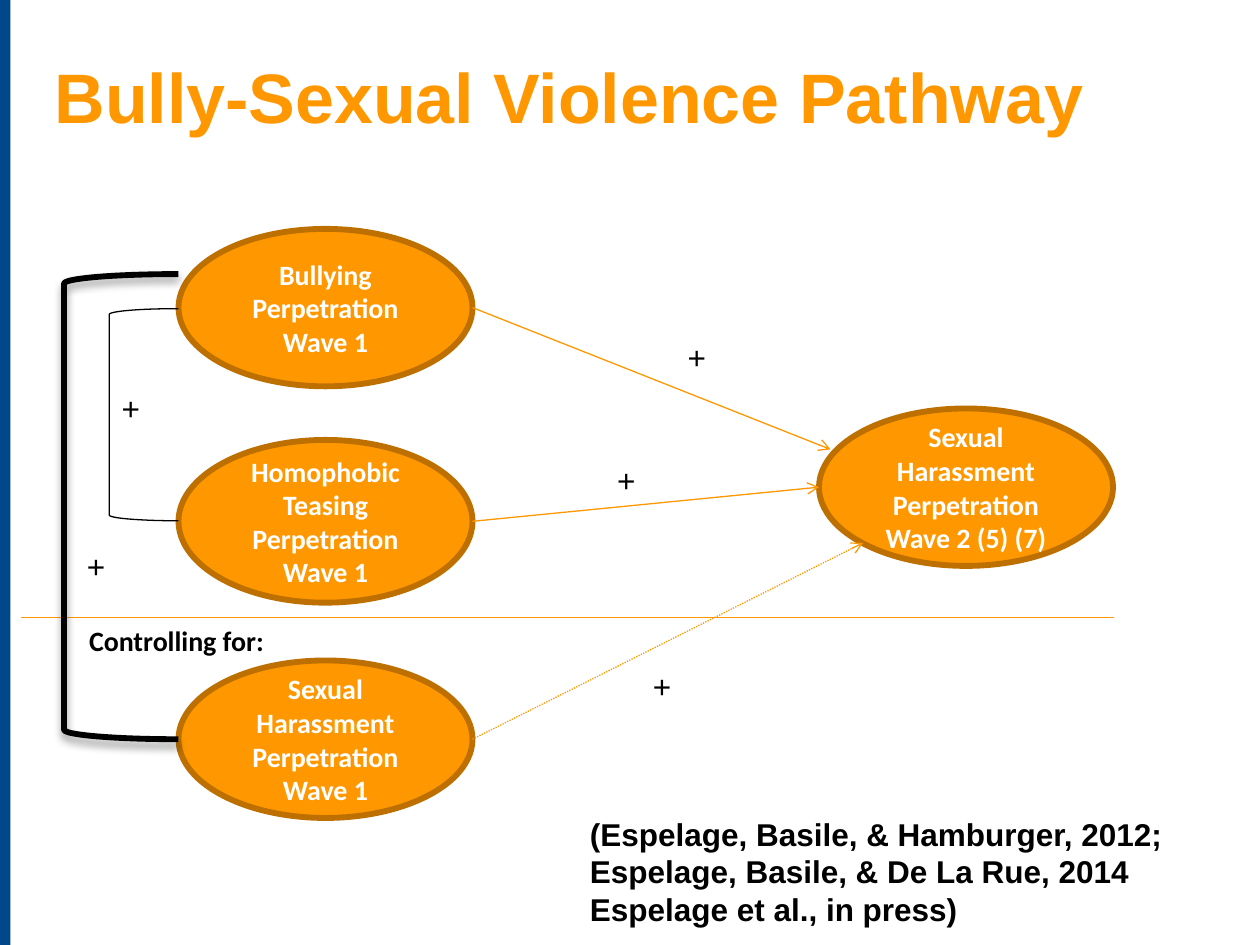
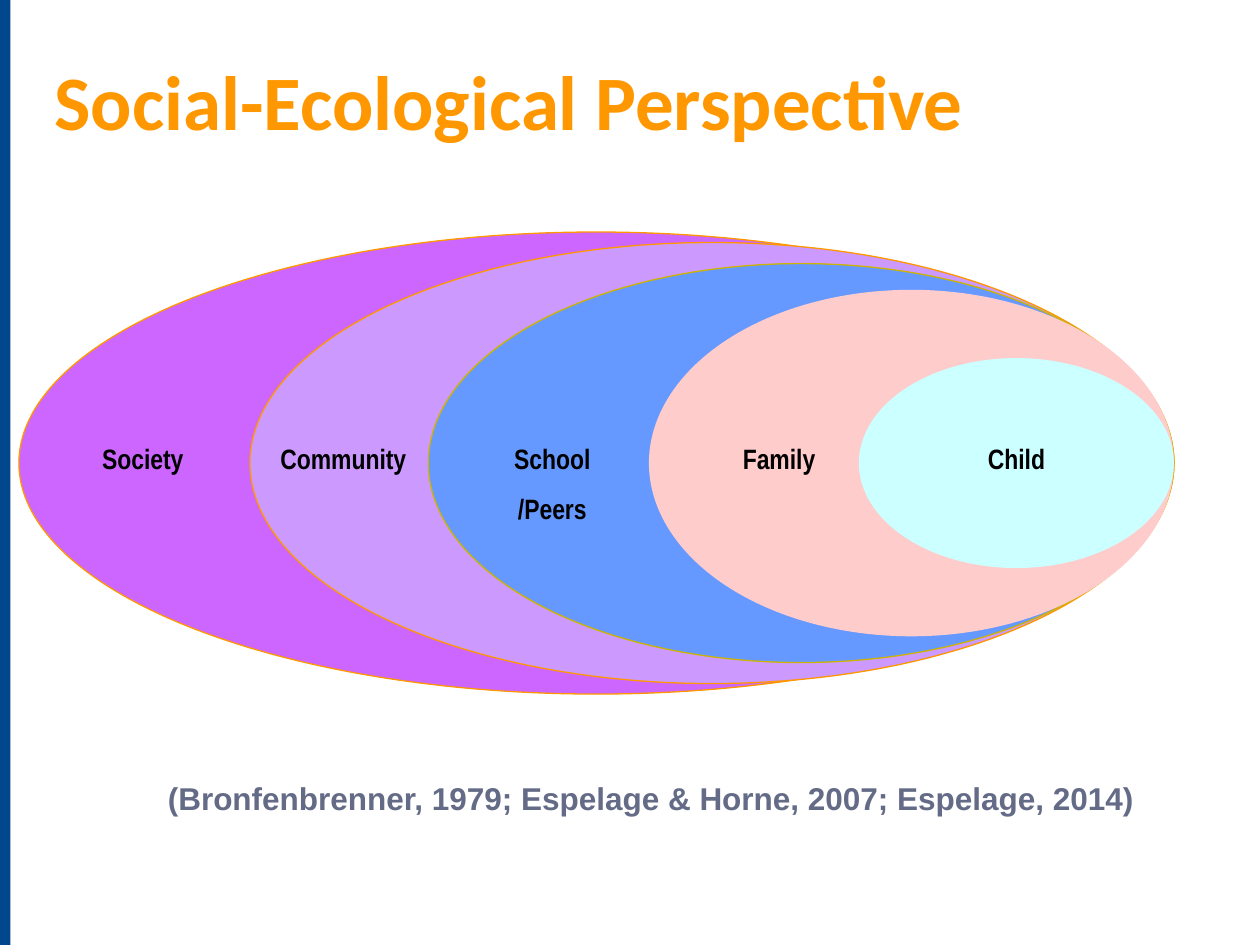
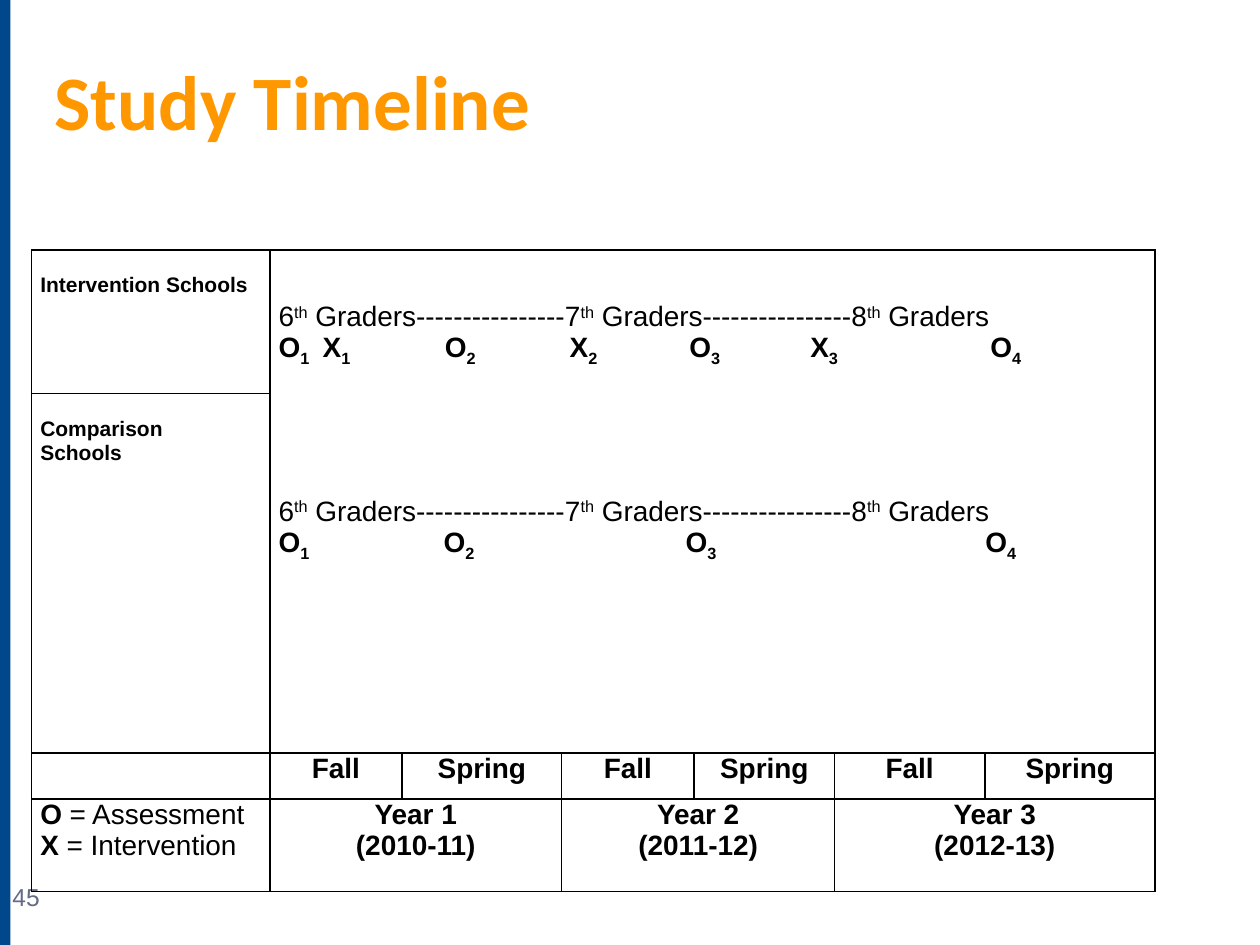
import itertools
from dataclasses import dataclass, field

import pptx
import pptx.dml.color
import pptx.enum.dml
import pptx.enum.shapes
import pptx.enum.text
import pptx.oxml
import pptx.oxml.ns
import pptx.util

COLORS = {
    "band": "00478B", "accent": "FF9800", "accent_edge": "BD7000", "text": "000000",
    "white": "FFFFFF", "muted": "646B86", "society": "CC66FF", "community": "CC99FF",
    "school": "6699FF", "school_edge": "CCB400", "family": "FFCCCC", "child": "CCFFFF",
}
FONTS = {
    "title": {"name": "Calibri", "size": 44, "bold": True, "color": "accent"},
    "node": {"name": "Calibri", "size": 16, "bold": True, "color": "white"},
    "note": {"name": "Calibri", "size": 16, "bold": True, "color": "text"},
    "sign": {"name": "Arial", "size": 18, "bold": False, "color": "text"},
    "citation": {"name": "Arial", "size": 18, "bold": True, "color": "text"},
    "layer": {"name": "Arial Narrow", "size": 16, "bold": True, "color": "text"},
    "number": {"name": "Arial", "size": 14, "bold": False, "color": "muted"},
    "cell": {"name": "Arial", "size": 16, "bold": True, "color": "text"},
}
COLUMNS, ROWS = 120, 90
SHAPES = pptx.enum.shapes.MSO_SHAPE
CENTER = pptx.enum.text.PP_ALIGN.CENTER
LEFT = pptx.enum.text.PP_ALIGN.LEFT
TOP = pptx.enum.text.MSO_ANCHOR.TOP
MIDDLE = pptx.enum.text.MSO_ANCHOR.MIDDLE
DOTTED = pptx.enum.dml.MSO_LINE.ROUND_DOT
Pt, Inches = pptx.util.Pt, pptx.util.Inches


@dataclass
class Paragraph:
    """Runs are (text, font changes) pairs; tabs are in inches."""
    runs: list
    tabs: list = field(default_factory=list)
    layout: dict = field(default_factory=dict)


def rgb(name):
    return pptx.dml.color.RGBColor.from_string(COLORS[name])


def set_all(target, values):
    for name, value in values.items():
        setattr(target, name, value)


def xml(markup):
    """Parse one DrawingML element, given without its namespace declaration."""
    head, rest = markup.split(" ", 1)
    return pptx.oxml.parse_xml(f"{head} {pptx.oxml.ns.nsdecls('a')} {rest}")


def write(frame, paragraphs, font, **layout):
    for index, content in enumerate(paragraphs):
        if isinstance(content, str):
            content = Paragraph([(content, {})])
        paragraph = frame.paragraphs[0] if index == 0 else frame.add_paragraph()
        values = {**layout, **content.layout}
        if index == 0:
            values.pop("space_before", None)
        set_all(paragraph, values)
        if content.tabs:
            stops = "".join(f'<a:tab pos="{Inches(tab)}" algn="l"/>' for tab in content.tabs)
            paragraph._p.get_or_add_pPr().append(xml(f"<a:tabLst >{stops}</a:tabLst>"))
        for text, changes in content.runs:
            run = paragraph.add_run()
            run.text = text
            style = {**FONTS[font], **changes}
            run.font.color.rgb = rgb(style.pop("color"))
            baseline = style.pop("baseline", None)
            set_all(run.font, {**style, "size": Pt(style["size"])})
            if baseline:
                run._r.get_or_add_rPr().set("baseline", str(baseline * 1000))


class Deck:
    """Holds the shared style and the current slide; lengths are grid columns and rows."""

    def __init__(self):
        self.file = pptx.Presentation()
        set_all(self.file, {"slide_width": Inches(10), "slide_height": Inches(7.5)})
        self.layout = self.file.slide_layouts[5]
        title = self.layout.placeholders[0]
        set_all(title, dict(zip(("left", "top", "width", "height"), self.box(4, 4, 103, 9))))
        set_all(title.text_frame, {
            "vertical_anchor": TOP, "margin_top": Inches(0.09), "word_wrap": True,
            "auto_size": pptx.enum.text.MSO_AUTO_SIZE.NONE})
        self.slide = None

    def across(self, columns):
        return round(self.file.slide_width * columns / COLUMNS)

    def down(self, rows):
        return round(self.file.slide_height * rows / ROWS)

    def box(self, left, top, width, height):
        return self.across(left), self.down(top), self.across(width), self.down(height)

    def start(self, title, **font):
        first = self.slide is None
        self.slide = self.file.slides.add_slide(self.layout)
        if first:
            band = self.shape(SHAPES.RECTANGLE, (0, 0, 1, ROWS), fill="band")
            self.file.slide_master.shapes.element.insert(2, band.element)
        write(self.slide.shapes.title.text_frame, [Paragraph([(title, font)])],
              "title", alignment=LEFT)

    def shape(self, kind, place, fill=None, edge=None, weight=0.75):
        shape = self.slide.shapes.add_shape(kind, *self.box(*place))
        shape.shadow.inherit = False
        for part, color in ((shape.fill, fill), (shape.line.fill, edge)):
            if color:
                part.solid()
                part.fore_color.rgb = rgb(color)
            else:
                part.background()
        if edge:
            shape.line.width = Pt(weight)
        return shape

    def node(self, place, lines):
        node = self.shape(SHAPES.OVAL, place, "accent", "accent_edge", 3.35)
        set_all(node.text_frame, {"word_wrap": True, "vertical_anchor": MIDDLE})
        write(node.text_frame, lines, "node", alignment=CENTER)

    def bracket(self, place, weight, shadow=False):
        bracket = self.shape(SHAPES.LEFT_BRACKET, place, edge="text", weight=weight)
        if shadow:
            effects = bracket.element.spPr.find(pptx.oxml.ns.qn("a:effectLst"))
            effects.append(xml(
                f'<a:outerShdw blurRad="{Pt(5.2)}" dist="{Pt(3)}" dir="5400000" rotWithShape="0">'
                f'<a:srgbClr val="{COLORS["text"]}"><a:alpha val="40000"/></a:srgbClr>'
                "</a:outerShdw>"))

    def line(self, start, end, arrow=False, dash=None):
        line = self.slide.shapes.add_connector(
            pptx.enum.shapes.MSO_CONNECTOR.STRAIGHT, self.across(start[0]), self.down(start[1]),
            self.across(end[0]), self.down(end[1]))
        line.line.color.rgb = rgb("accent")
        set_all(line.line, {"width": Pt(0.75), "dash_style": dash})
        if arrow:
            line.line._get_or_add_ln().append(xml('<a:tailEnd type="arrow"/>'))
        line.element.spPr.append(xml("<a:effectLst />"))

    def text(self, place, paragraphs, font, fill=None, wrap=True, **layout):
        label = self.slide.shapes.add_textbox(*self.box(*place))
        label.text_frame.word_wrap = wrap
        if fill:
            label.fill.solid()
            label.fill.fore_color.rgb = rgb(fill)
        write(label.text_frame, paragraphs, font, **layout)

    def table(self, left, top, widths, heights):
        table = self.slide.shapes.add_table(
            len(heights), len(widths),
            *self.box(left, top, sum(widths), sum(heights))).table
        set_all(table, {"first_row": False, "horz_banding": False})
        for column, width in zip(table.columns, widths):
            column.width = self.across(width)
        for row, height in zip(table.rows, heights):
            row.height = self.down(height)
        for cell in table.iter_cells():
            set_all(cell, {"margin_left": Inches(0.07), "margin_right": Inches(0.07),
                           "margin_top": 0, "margin_bottom": 0})
            cell.fill.background()
            for index, side in enumerate("LRTB"):
                cell._tc.get_or_add_tcPr().insert(index, xml(
                    f'<a:ln{side} w="{Pt(1)}"><a:solidFill><a:srgbClr val="{COLORS["text"]}"/>'
                    f"</a:solidFill></a:ln{side}>"))
        return table


def pathway(deck):
    deck.start("Bully-Sexual Violence Pathway", name="Arial", size=40)
    left, width, outcome_left = 17, 28, 78
    predictors = [
        (21.8, 15, "Bullying", (79.1, 42.8), None),
        (41.9, 15.5, "Homophobic Teasing", (outcome_left, 46.4), None),
        (62.9, 15, "Sexual Harassment", (82.2, 51.7), DOTTED),
    ]
    for top, height, topic, _, _ in predictors:
        deck.node((left, top, width, height), [topic, "Perpetration", "Wave 1"])
    deck.node((outcome_left, 38.9, width, 15),
              ["Sexual Harassment", "Perpetration", "Wave 2 (5) (7)"])
    for top, height, _, target, dash in predictors:
        deck.line((left + width, top + height / 2), target, arrow=True, dash=dash)
    deck.line((2, 58.8), (106.1, 58.8))
    deck.text((7.3, 58.8, 19.3, 4.4), ["Controlling for:"], "note", wrap=False)
    deck.bracket((10.4, 29.4, 6.6, 20.2), 0.75)
    deck.bracket((6.1, 26.1, 10.9, 44.3), 3.35, shadow=True)
    for sign_left, sign_top in ((10.4, 36.5), (57.6, 43.3), (64.3, 31.6), (7.1, 51.5), (61, 62.9)):
        deck.text((sign_left, sign_top, 6.6, 4.8), ["+"], "sign")
    deck.text((55, 77, 61, 12.1),
              ["(Espelage, Basile, & Hamburger, 2012; Espelage, Basile, & De La Rue, 2014",
               "Espelage et al., in press)"], "citation")


def perspective(deck):
    deck.start("Social-Ecological Perspective")
    right, middle, label_width = 111.8, 44.1, 20
    layers = [
        (110, 44, "society", "accent", ["Society"], 13.6),
        (88, 42, "community", "accent", ["Community"], 32.7),
        (71, 38, "school", "school_edge", ["School", "/Peers"], 52.6),
        (50, 33, "family", None, ["Family"], 74.2),
        (30, 20, "child", None, ["Child"], 96.8),
    ]
    for width, height, color, edge, lines, label_center in layers:
        deck.shape(SHAPES.OVAL, (right - width, middle - height / 2, width, height), color, edge)
        deck.text((label_center - label_width / 2, 41.5, label_width, 6 * len(lines) - 0.8),
                  lines, "layer", fill=None if edge else color,
                  alignment=CENTER, space_before=Pt(9))
    deck.text((9, 74, 106, 4.4),
              [Paragraph([("(Bronfenbrenner, 1979; Espelage & Horne, 2007; Espelage, 2014)",
                           {"color": "muted"})])],
              "citation", alignment=CENTER, line_spacing=0.9)


def grade_line(**layout):
    plain, raised = {"bold": False}, {"bold": False, "baseline": 30}
    dashes = "-" * 16
    starts = ["6", f" Graders{dashes}7", f" Graders{dashes}8"]
    runs = [run for start in starts for run in ((start, plain), ("th", raised))]
    return Paragraph(runs + [(" Graders", plain)], layout=layout)


def mark_line(marks, tabs):
    """Marks such as O1, the first at the margin and each later one at its tab."""
    runs = [[(("\t" if index else "") + mark[0], {}), (mark[1], {"baseline": -25})]
            for index, mark in enumerate(marks)]
    return Paragraph(list(itertools.chain(*runs)), tabs)


def timeline(deck):
    deck.start("Study Timeline")
    deck.text((0, 83.4, 38, 4.8), ["45"], "number")
    table = deck.table(3, 23.8, [22.7, 12.6, 15.2, 12.6, 13.4, 14.3, 16.2],
                       [13.7, 34.2, 4.4, 8.8])

    for row, lines in enumerate((["Intervention Schools"], ["Comparison", "Schools"])):
        group = table.cell(row, 0)
        group.margin_top = Inches(0.19)
        write(group.text_frame, [Paragraph([(line, {"size": 12})]) for line in lines], "cell")

    schedule = table.cell(0, 1)
    schedule.merge(table.cell(1, 6))
    schedule.margin_top = Inches(0.41)
    write(schedule.text_frame, [
        grade_line(),
        mark_line(["O1", "X1", "O2", "X2", "O3", "X3", "O4"],
                  [0.35, 1.32, 2.31, 3.26, 4.22, 5.65]),
        grade_line(space_before=Pt(73)),
        mark_line(["O1", "O2", "O3", "O4"], [1.31, 3.23, 5.61]),
    ], "cell")

    for column in range(1, 7):
        term = "Fall" if column % 2 else "Spring"
        write(table.cell(2, column).text_frame, [term], "cell", alignment=CENTER)
    for year in range(1, 4):
        column = 2 * year - 1
        span = table.cell(3, column)
        span.merge(table.cell(3, column + 1))
        write(span.text_frame, [f"Year {year}", f"({2009 + year}-{10 + year})"],
              "cell", alignment=CENTER)
    write(table.cell(3, 0).text_frame,
          [Paragraph([(mark, {}), (f" = {meaning}", {"bold": False})])
           for mark, meaning in (("O", "Assessment"), ("X", "Intervention"))], "cell")


def main():
    deck = Deck()
    for build in (pathway, perspective, timeline):
        build(deck)
    deck.file.save("out.pptx")


if __name__ == "__main__":
    main()
